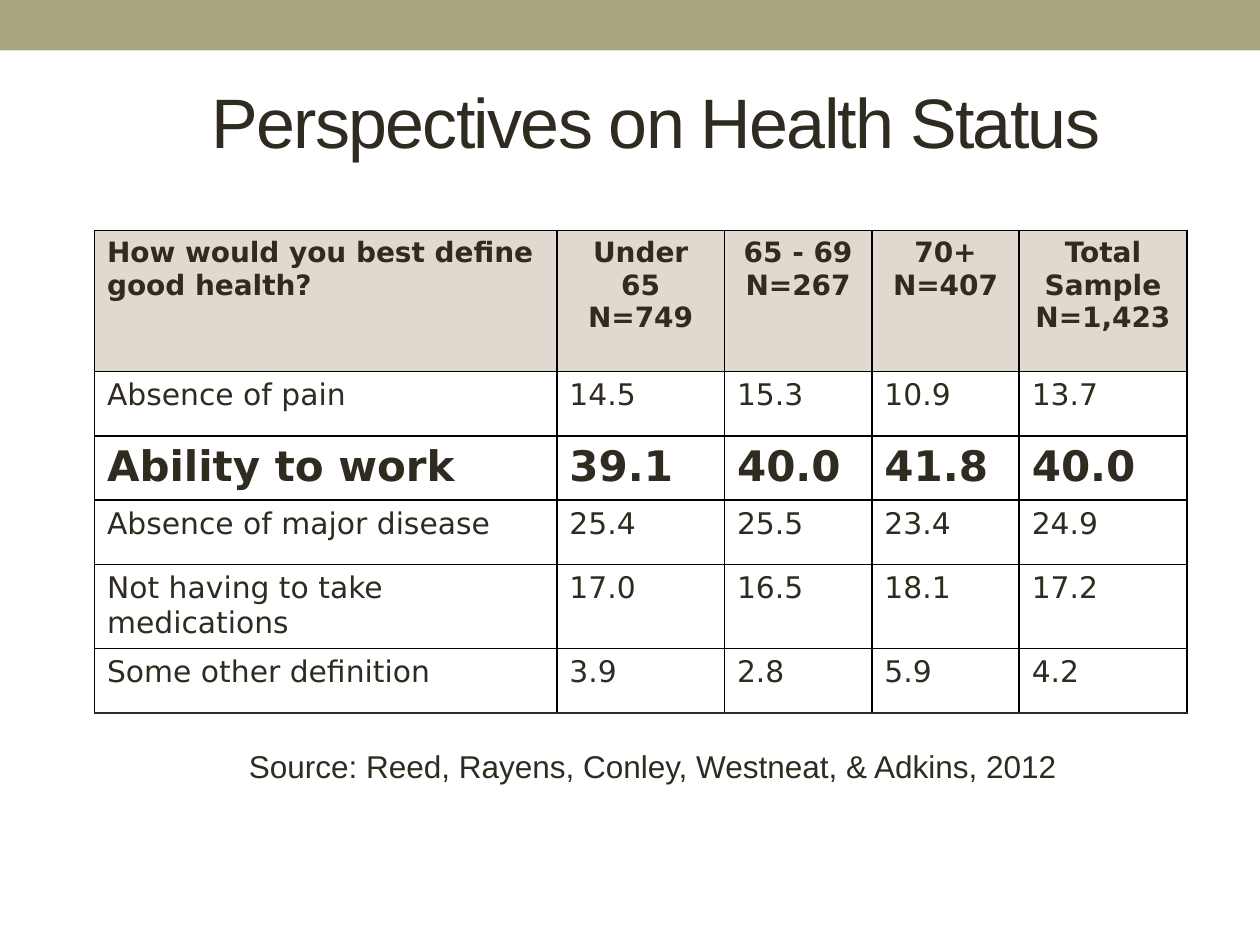
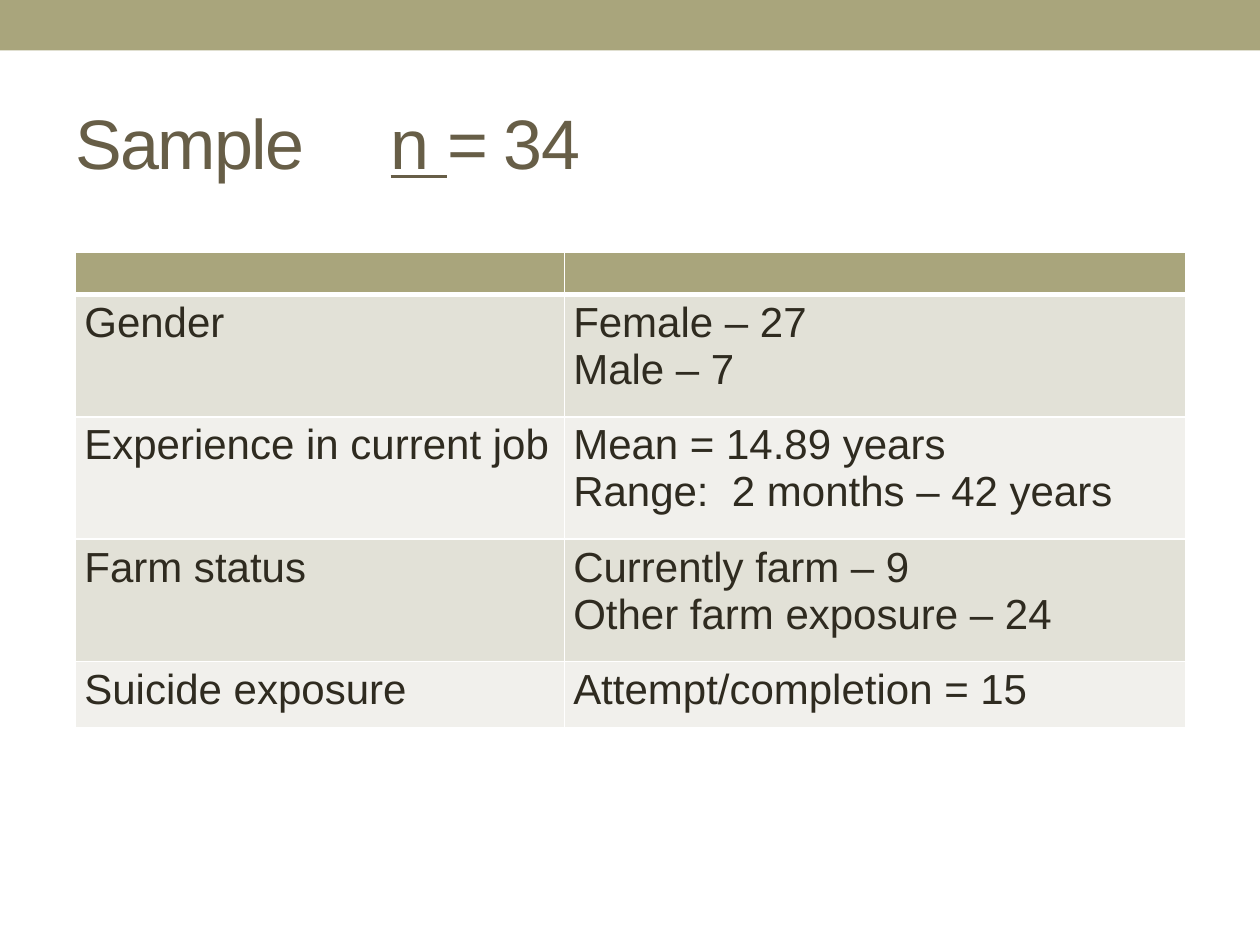
from lxml.etree import SubElement
from pptx import Presentation
from pptx.dml.color import RGBColor
from pptx.enum.shapes import MSO_SHAPE
from pptx.enum.text import MSO_ANCHOR, PP_ALIGN
from pptx.oxml.ns import qn
from pptx.util import Inches, Pt

HUES = {
    "ink": "2F2B20", "brown": "675E47", "olive": "A9A57C", "sand": "E0D9D0",
    "dark": "E2E1D7", "light": "F1F0EC", "black": "000000", "white": "FFFFFF",
}
SANS, WIDE = "Arial", "DejaVu Sans"

HEALTH = {
    "at": (0.75, 1.83),
    "cols": [3.67, 1.33, 1.17, 1.17, 1.33],
    "heights": [1.12, 0.51, 0.51, 0.51, 0.67, 0.51],
    "pad": (0.1, 0.05),
    "rows": [
        ["How would you best define good health?", "Under 65\nN=749",
         "65 - 69\nN=267", "70+\nN=407", "Total Sample\nN=1,423"],
        ["Absence of pain", "14.5", "15.3", "10.9", "13.7"],
        ["Ability to work", "39.1", "40.0", "41.8", "40.0"],
        ["Absence of major disease", "25.4", "25.5", "23.4", "24.9"],
        ["Not having to take medications", "17.0", "16.5", "18.1", "17.2"],
        ["Some other definition", "3.9", "2.8", "5.9", "4.2"],
    ],
}
SAMPLE = {
    "at": (0.6, 2),
    "cols": [3.88, 4.93],
    "heights": [0.34, 0.97, 0.97, 0.97, 0.53],
    "pad": (0.07, 0.04),
    "rows": [
        ["", ""],
        ["Gender", "Female – 27\nMale – 7"],
        ["Experience in current job", "Mean = 14.89 years\nRange:  2 months – 42 years"],
        ["Farm status", "Currently farm – 9\nOther farm exposure – 24"],
        ["Suicide exposure", "Attempt/completion = 15"],
    ],
}
TITLES = [
    {"box": (0.83, 0.42, 8.75, 1.08), "hue": "ink", "align": PP_ALIGN.CENTER,
     "runs": [("Perspectives on Health Status", False)]},
    {"box": (0.5, 0.58, 9, 1.08), "hue": "brown", "align": PP_ALIGN.LEFT,
     "runs": [("Sample\t\t", False), ("n ", True), ("= 34", False)]},
]
SOURCE = "Source: Reed, Rayens, Conley, Westneat, & Adkins, 2012"


def tint(name):
    return RGBColor.from_string(HUES[name])


def style(font, hue="ink", **values):
    for key, value in values.items():
        setattr(font, key, value)
    font.color.rgb = tint(hue)


def start(deck, title):
    slide = deck.slides.add_slide(deck.slide_layouts[5])
    band = slide.shapes.add_shape(MSO_SHAPE.RECTANGLE, 0, 0, deck.slide_width, Inches(0.4))
    band.shadow.inherit = False
    band.fill.solid()
    band.fill.fore_color.rgb = tint("olive")
    band.line.fill.background()
    slide.shapes._spTree.insert(2, band._element)
    head = slide.shapes.title
    head.left, head.top, head.width, head.height = map(Inches, title["box"])
    head.text_frame.vertical_anchor = MSO_ANCHOR.MIDDLE
    para = head.text_frame.paragraphs[0]
    para.alignment = title["align"]
    for text, under in title["runs"]:
        run = para.add_run()
        run.text = text
        style(run.font, title["hue"], name=SANS, size=Pt(40), underline=under)
        run.font._element.set("spc", "-100")
    return slide


def edge(cell, hue, base=None, width=1):
    props = cell._tc.get_or_add_tcPr()
    for side in "LRTB":
        low = side == "B"
        line = SubElement(props, qn(f"a:ln{side}"), w=str(Pt(width if low else 1)))
        fill = SubElement(line, qn("a:solidFill"))
        SubElement(fill, qn("a:srgbClr"), val=HUES[base if low and base else hue])


def grid(slide, data, look):
    cols, heights, rows = data["cols"], data["heights"], data["rows"]
    box = map(Inches, (*data["at"], sum(cols), sum(heights)))
    table = slide.shapes.add_table(len(rows), len(cols), *box).table
    table.first_row = table.horz_banding = False
    for col, width in zip(table.columns, cols):
        col.width = Inches(width)
    side, top = map(Inches, data["pad"])
    pads = {"margin_left": side, "margin_right": side, "margin_top": top, "margin_bottom": top}
    for r, row in enumerate(rows):
        table.rows[r].height = Inches(heights[r])
        for c, text in enumerate(row):
            cell = table.cell(r, c)
            for key, value in pads.items():
                setattr(cell, key, value)
            form = look(r, c)
            edge(cell, **form["edge"])
            if form["fill"]:
                cell.fill.solid()
                cell.fill.fore_color.rgb = tint(form["fill"])
            else:
                cell.fill.background()
            cell.text_frame.text = text
            for para in cell.text_frame.paragraphs:
                para.alignment = form.get("align", PP_ALIGN.LEFT)
                for run in para.runs:
                    style(run.font, **form["font"])
                if not para.runs:
                    SubElement(para._p, qn("a:endParaRPr"), sz="1200")


def health_look(r, c):
    last = len(HEALTH["rows"]) - 1
    return {
        "fill": "sand" if r == 0 else None,
        "edge": {"hue": "black", "base": "ink" if r == last else None},
        "align": PP_ALIGN.CENTER if r == 0 and c else PP_ALIGN.LEFT,
        "font": {"name": WIDE, "size": Pt({0: 16, 2: 24}.get(r, 17)), "bold": r in (0, 2)},
    }


def sample_look(r, c):
    return {
        "fill": "olive" if r == 0 else ("light", "dark")[r % 2],
        "edge": {"hue": "white", "width": 1 if r else 3},
        "font": {"name": SANS, "size": Pt(24), "bold": False},
    }


def main():
    deck = Presentation()
    deck.slide_width, deck.slide_height = Inches(10), Inches(7.5)
    first, second = [start(deck, title) for title in TITLES]
    grid(first, HEALTH, health_look)
    note = first.shapes.add_textbox(*map(Inches, (0.64, 5.88, 9.08, 0.4))).text_frame
    note.word_wrap = True
    note.text = SOURCE
    para = note.paragraphs[0]
    para.alignment = PP_ALIGN.CENTER
    style(para.runs[0].font, name=SANS, size=Pt(18))
    grid(second, SAMPLE, sample_look)
    deck.save("out.pptx")


if __name__ == "__main__":
    main()
